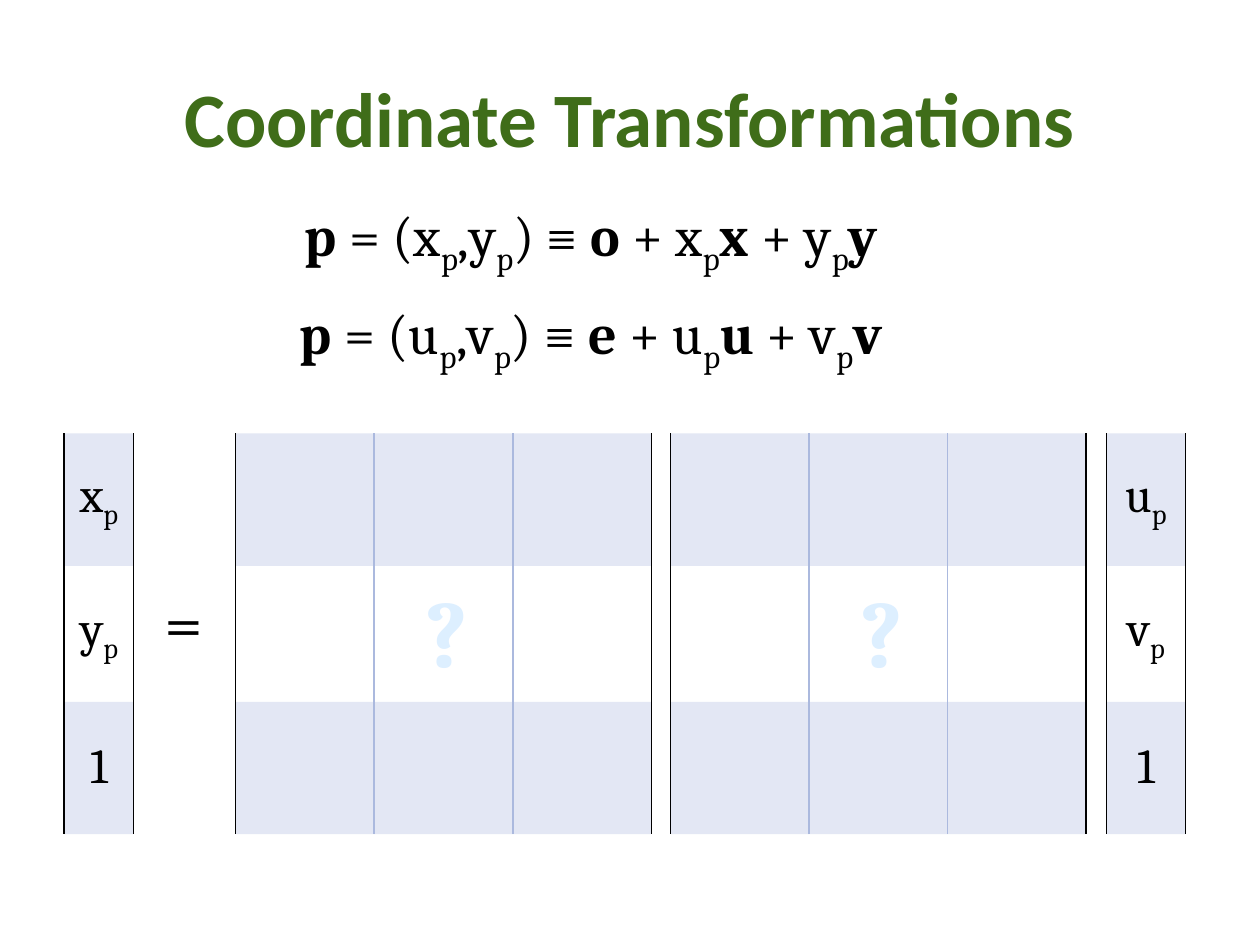
from lxml.etree import SubElement
from pptx import Presentation
from pptx.dml.color import RGBColor as Rgb
from pptx.enum.text import MSO_ANCHOR as Anchor, MSO_AUTO_SIZE as AutoSize, PP_ALIGN as Align
from pptx.oxml import parse_xml
from pptx.oxml.ns import nsdecls, qn
from pptx.util import Inches, Pt

COLORS = {"title": "3F6D19", "ink": "000000", "hint": "DDEFFF",
          "band": "738AC8", "grid": "ABB9DE"}
MATH = "Cambria"
NO_STYLE = "{2D5ABB26-0587-4C30-8999-92F81FD0307C}"
ROWS = (1.05, 1.08, 1.05)
TOP = 3.44
CELL = 1.1
MATRIX_LEFTS = (1.87, 5.32)


def add_span(para, text, size, color="ink", font=MATH, bold=False, sub=False):
    span = para.add_run()
    span.text = text
    span.font.size = Pt(size)
    span.font.name = font
    span.font.bold = bold
    span.font.color.rgb = Rgb.from_string(COLORS[color])
    if sub:
        span.font._element.set("baseline", "-25000")


def add_spans(para, spans, size):
    """Each span is (text, kind): plain, bold or sub."""
    for text, kind in spans:
        add_span(para, text, size, bold=kind == "bold", sub=kind == "sub")


def add_box(page, left, top, width, height, align=Align.LEFT, wrap=False):
    box = page.shapes.add_textbox(*map(Inches, (left, top, width, height)))
    frame = box.text_frame
    frame.word_wrap = wrap
    frame.auto_size = AutoSize.NONE if wrap else AutoSize.SHAPE_TO_FIT_TEXT
    para = frame.paragraphs[0]
    para.alignment = align
    return frame, para


def add_title(page, text):
    frame, para = add_box(page, 0.5, 0.3, 9, 1.25, Align.CENTER, wrap=True)
    frame.vertical_anchor = Anchor.MIDDLE
    add_span(para, text, 44, "title", "Calibri", bold=True)


def add_equation(page, left, top, width, origin, first, second):
    """p written as an origin plus two scaled basis vectors."""
    para = add_box(page, left, top, width, 0.64)[1]
    add_spans(para, [
        ("p", "bold"), (f" = ({first}", "plain"), ("p", "sub"),
        (f",{second}", "plain"), ("p", "sub"), (") ≡ ", "plain"),
        (origin, "bold"), (f" + {first}", "plain"), ("p", "sub"),
        (first, "bold"), (f" + {second}", "plain"), ("p", "sub"),
        (second, "bold")], 32)


def style_cell(cell, banded, left, right):
    if banded:
        cell.fill.solid()
        cell.fill.fore_color.rgb = Rgb.from_string(COLORS["band"])
        tint = next(cell._tc.tcPr.iter(qn("a:srgbClr")))
        SubElement(tint, qn("a:alpha")).set("val", "20000")
    else:
        cell.fill.background()
    # Borders come before the fill in the cell properties
    for index, (side, color) in enumerate((("L", left), ("R", right))):
        cell._tc.tcPr.insert(index, parse_xml(
            f'<a:ln{side} {nsdecls("a")} w="12700"><a:solidFill>'
            f'<a:srgbClr val="{COLORS[color]}"/></a:solidFill></a:ln{side}>'))


def add_grid(page, left, columns, width):
    """Banded three-row table with dark outer sides and light inner lines."""
    table = page.shapes.add_table(
        len(ROWS), columns, Inches(left), Inches(TOP),
        Inches(columns * width), Inches(sum(ROWS))).table
    table._tbl.tblPr.find(qn("a:tableStyleId")).text = NO_STYLE
    table.first_row = table.horz_banding = False
    for column in table.columns:
        column.width = Inches(width)
    for r, height in enumerate(ROWS):
        table.rows[r].height = Inches(height)
        for c in range(columns):
            style_cell(table.cell(r, c), r % 2 == 0,
                       "ink" if c == 0 else "grid",
                       "ink" if c == columns - 1 else "grid")
    return table


def add_vector(page, left, width, first, second):
    table = add_grid(page, left, 1, width)
    entries = ([(first, "plain"), ("p", "sub")],
               [(second, "plain"), ("p", "sub")],
               [("1", "plain")])
    for r, spans in enumerate(entries):
        cell = table.cell(r, 0)
        cell.vertical_anchor = Anchor.MIDDLE
        para = cell.text_frame.paragraphs[0]
        para.alignment = Align.CENTER
        add_spans(para, spans, 28)


def main():
    deck = Presentation()
    deck.slide_width, deck.slide_height = Inches(10), Inches(7.5)
    page = deck.slides.add_slide(deck.slide_layouts[6])

    add_title(page, "Coordinate Transformations")

    # Left-hand vector and equals sign
    add_vector(page, 0.51, 0.55, "x", "y")
    add_span(add_box(page, 1.21, 4.54, 0.51, 0.77)[1], "=", 40)

    # Unknown matrices and right-hand vector
    for left in MATRIX_LEFTS:
        add_grid(page, left, 3, CELL)
    add_vector(page, 8.78, 0.63, "u", "v")

    # Question mark over the middle of each matrix
    mark_width = 0.54
    for left in MATRIX_LEFTS:
        middle = left + 1.5 * CELL + 0.03
        para = add_box(page, middle - mark_width / 2, 4.5, mark_width, 1.01,
                       Align.CENTER)[1]
        add_span(para, "?", 54, "hint", bold=True)

    # The point p in both coordinate frames
    add_equation(page, 2.32, 1.54, 5.16, "o", "x", "y")
    add_equation(page, 2.28, 2.32, 5.23, "e", "u", "v")

    deck.save("out.pptx")


if __name__ == "__main__":
    main()
